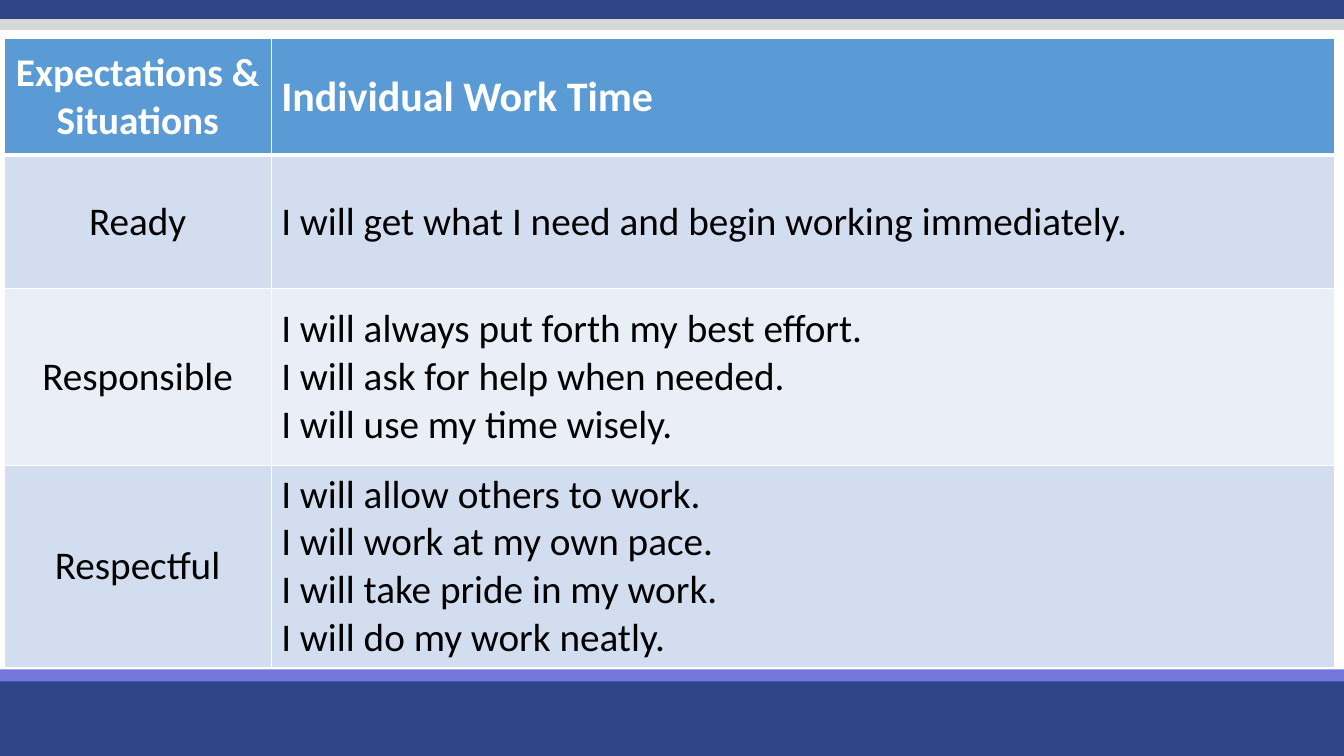
from dataclasses import dataclass

from lxml import etree
from pptx import Presentation
from pptx import util as u
from pptx.dml.color import RGBColor
from pptx.enum import shapes, text
from pptx.oxml import ns

NAVY = RGBColor(0x2E, 0x44, 0x88)
VIOLET = RGBColor(0x74, 0x76, 0xDA)
GRAY = RGBColor(0xD8, 0xD8, 0xD8)
WHITE = RGBColor(0xFF, 0xFF, 0xFF)
BLACK = RGBColor(0, 0, 0)
HEADER_BLUE = RGBColor(0x5B, 0x9B, 0xD5)
ROW_FILLS = (RGBColor(0xEA, 0xEF, 0xF7), RGBColor(0xD2, 0xDE, 0xEF))

GRID = u.Inches(0.1)
SLIDE_COLUMNS, SLIDE_ROWS = 133.33, 75
TABLE_LEFT, TABLE_TOP = 0.4, 3.8
COLUMN_WIDTHS = (26.5, 105.5)


@dataclass(frozen=True)
class Band:
    """Full-width stripe, measured in grid rows."""
    top: float
    height: float
    color: RGBColor


@dataclass(frozen=True)
class Expectation:
    situation: str
    statements: tuple[str, ...]
    height: float


BANDS = (
    Band(67, 8, NAVY),
    Band(66.4, 1.2, VIOLET),
    Band(0, 1.9, NAVY),
    Band(1.9, 1.1, GRAY),
)
EXPECTATIONS = (
    Expectation("Expectations & Situations", ("Individual Work Time",), 11.6),
    Expectation("Ready", ("I will get what I need and begin working immediately.",), 13.2),
    Expectation("Responsible", (
        "I will always put forth my best effort.",
        "I will ask for help when needed.",
        "I will use my time wisely.",
    ), 17.6),
    Expectation("Respectful", (
        "I will allow others to work.",
        "I will work at my own pace.",
        "I will take pride in my work.",
        "I will do my work neatly.",
    ), 18.8),
)


def grid(units: float) -> int:
    return round(units * GRID)


def draw_band(slide, band: Band) -> None:
    shape = slide.shapes.add_shape(shapes.MSO_SHAPE.RECTANGLE, 0, grid(band.top),
                                   grid(SLIDE_COLUMNS), grid(band.height))
    shape.shadow.inherit = False
    shape.fill.solid()
    shape.fill.fore_color.rgb = band.color
    shape.line.fill.background()


def write_text(frame, lines: tuple[str, ...], *, size: float, color: RGBColor,
               bold: bool = False, align=text.PP_ALIGN.LEFT) -> None:
    for index, line in enumerate(lines):
        paragraph = frame.paragraphs[0] if index == 0 else frame.add_paragraph()
        paragraph.alignment = align
        run = paragraph.add_run()
        run.text = line
        run.font.name = "Calibri"
        run.font.size = u.Pt(size)
        run.font.bold = bold
        run.font.color.rgb = color


def set_borders(cell, top: float, bottom: float) -> None:
    """Draw white cell borders; the sides are 1 pt, top and bottom are given in points."""
    properties = cell._tc.get_or_add_tcPr()
    for side, width in (("L", 1), ("R", 1), ("T", top), ("B", bottom)):
        line = etree.SubElement(properties, ns.qn(f"a:ln{side}"), w=str(u.Pt(width)))
        fill = etree.SubElement(line, ns.qn("a:solidFill"))
        etree.SubElement(fill, ns.qn("a:srgbClr"), val=str(WHITE))


def draw_table(slide) -> None:
    height = sum(expectation.height for expectation in EXPECTATIONS)
    table = slide.shapes.add_table(
        len(EXPECTATIONS), len(COLUMN_WIDTHS), grid(TABLE_LEFT), grid(TABLE_TOP),
        grid(sum(COLUMN_WIDTHS)), grid(height)).table
    for column, width in zip(table.columns, COLUMN_WIDTHS):
        column.width = grid(width)
    for index, expectation in enumerate(EXPECTATIONS):
        header = index == 0
        table.rows[index].height = grid(expectation.height)
        for cell in table.rows[index].cells:
            cell.vertical_anchor = text.MSO_ANCHOR.MIDDLE
            set_borders(cell, top=3 if index == 1 else 1, bottom=3 if header else 1)
            cell.fill.solid()
            cell.fill.fore_color.rgb = HEADER_BLUE if header else ROW_FILLS[index % 2]
        color = WHITE if header else BLACK
        write_text(table.cell(index, 0).text_frame, (expectation.situation,), size=28,
                   color=color, bold=header, align=text.PP_ALIGN.CENTER)
        write_text(table.cell(index, 1).text_frame, expectation.statements,
                   size=30 if header else 28, color=color, bold=header)


def main() -> None:
    presentation = Presentation()
    presentation.slide_width = grid(SLIDE_COLUMNS)
    presentation.slide_height = grid(SLIDE_ROWS)
    slide = presentation.slides.add_slide(presentation.slide_layouts[6])
    for band in BANDS:
        draw_band(slide, band)
    draw_table(slide)
    presentation.save("out.pptx")


if __name__ == "__main__":
    main()
